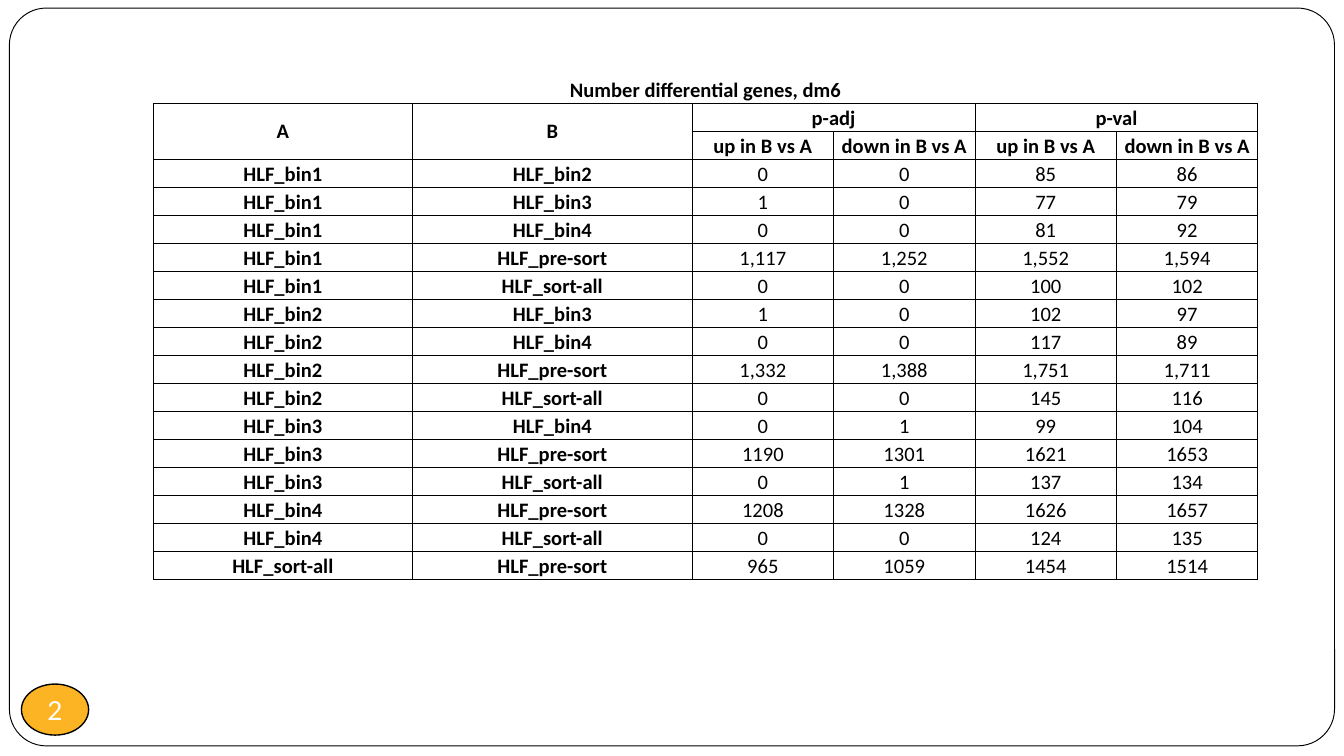
from dataclasses import dataclass

from lxml import etree
from pptx import Presentation
from pptx.dml.color import RGBColor
from pptx.enum.shapes import MSO_SHAPE
from pptx.enum.text import MSO_ANCHOR, PP_ALIGN
from pptx.oxml.ns import qn
from pptx.util import Inches, Pt

ROUND, OVAL = MSO_SHAPE.ROUNDED_RECTANGLE, MSO_SHAPE.OVAL
MIDDLE, BOTTOM = MSO_ANCHOR.MIDDLE, MSO_ANCHOR.BOTTOM
CENTER = PP_ALIGN.CENTER


@dataclass(frozen=True)
class Theme:
    ink: str = "000000"
    paper: str = "FFFFFF"
    accent: str = "FCB424"
    body: str = "Calibri"
    badge: str = "Lato"
    cell_size: float = 11
    badge_size: float = 14
    rule: float = 0.5
    badge_rule: float = 0.75


THEME = Theme()

TITLE = "Number differential genes, dm6"
GROUPS = ["A", "B", "p-adj", "", "p-val", ""]
HEADS = ["", ""] + ["up in B vs A", "down in B vs A"] * 2
DATA = [
    ("bin1", "bin2", "0", "0", "85", "86"),
    ("bin1", "bin3", "1", "0", "77", "79"),
    ("bin1", "bin4", "0", "0", "81", "92"),
    ("bin1", "pre-sort", "1,117", "1,252", "1,552", "1,594"),
    ("bin1", "sort-all", "0", "0", "100", "102"),
    ("bin2", "bin3", "1", "0", "102", "97"),
    ("bin2", "bin4", "0", "0", "117", "89"),
    ("bin2", "pre-sort", "1,332", "1,388", "1,751", "1,711"),
    ("bin2", "sort-all", "0", "0", "145", "116"),
    ("bin3", "bin4", "0", "1", "99", "104"),
    ("bin3", "pre-sort", "1190", "1301", "1621", "1653"),
    ("bin3", "sort-all", "0", "1", "137", "134"),
    ("bin4", "pre-sort", "1208", "1328", "1626", "1657"),
    ("bin4", "sort-all", "0", "0", "124", "135"),
    ("sort-all", "pre-sort", "965", "1059", "1454", "1514"),
]
NAME_WIDTHS = [1.93, 2.08]
# First row, first column, last row, last column of each merged block
SPANS = [(0, 0, 0, 5), (1, 0, 2, 0), (1, 1, 2, 1), (1, 2, 1, 3), (1, 4, 1, 5)]


def color(code):
    return RGBColor.from_string(code)


def style_text(frame, font, size, ink, bold=False):
    para = frame.paragraphs[0]
    para.alignment = CENTER
    for run in para.runs:
        run.font.name = font
        run.font.size = Pt(size)
        run.font.bold = bold
        run.font.color.rgb = color(ink)


def add_shape(slide, kind, box, fill, rule):
    shape = slide.shapes.add_shape(kind, *map(Inches, box))
    shape.shadow.inherit = False
    shape.fill.solid()
    shape.fill.fore_color.rgb = color(fill)
    shape.line.color.rgb = color(THEME.ink)
    shape.line.width = Pt(rule)
    return shape


def add_frame(slide, box):
    frame = add_shape(slide, ROUND, box, THEME.paper, THEME.rule)
    frame.adjustments[0] = 0.05


def add_badge(slide, box, label):
    badge = add_shape(slide, OVAL, box, THEME.accent, THEME.badge_rule)
    frame = badge.text_frame
    frame.margin_left = frame.margin_right = 0
    frame.margin_top = frame.margin_bottom = 0
    frame.word_wrap = False
    frame.vertical_anchor = MIDDLE
    frame.text = label
    style_text(frame, THEME.badge, THEME.badge_size, THEME.paper)


def set_borders(cell, shown):
    """Rule the sides in shown (letters of LRTB) and clear the others."""
    props = cell._tc.get_or_add_tcPr()
    for side in "LRTB":
        line = etree.SubElement(props, qn(f"a:ln{side}"), w=str(Pt(THEME.rule)))
        if side in shown:
            fill = etree.SubElement(line, qn("a:solidFill"))
            etree.SubElement(fill, qn("a:srgbClr"), val=THEME.ink)
        else:
            etree.SubElement(line, qn("a:noFill"))


def style_cell(cell, text, bold, anchor, sides):
    cell.margin_left = cell.margin_right = cell.margin_top = Inches(0.01)
    cell.margin_bottom = 0
    cell.vertical_anchor = anchor
    set_borders(cell, sides)
    cell.fill.background()
    if text:
        cell.text_frame.text = text
        style_text(cell.text_frame, THEME.body, THEME.cell_size, THEME.ink, bold)


def add_genes(slide, box):
    names = [[f"HLF_{a}", f"HLF_{b}", *counts] for a, b, *counts in DATA]
    rows = [[TITLE] + [""] * 5, GROUPS, HEADS] + names
    widths = NAME_WIDTHS + [(box[2] - sum(NAME_WIDTHS)) / 4] * 4
    table = slide.shapes.add_table(len(rows), len(widths), *map(Inches, box)).table
    table.first_row = table.horz_banding = False
    for col, width in zip(table.columns, widths):
        col.width = Inches(width)
    for row in table.rows:
        row.height = Inches(box[3] / len(rows))
    for r, row in enumerate(rows):
        for c, text in enumerate(row):
            bold = r < 3 or c < 2
            anchor = MIDDLE if r == 1 and c < 2 else BOTTOM
            style_cell(table.cell(r, c), text, bold, anchor, "LRTB" if r else "B")
    for top, left, bottom, right in SPANS:
        table.cell(top, left).merge(table.cell(bottom, right))


def main():
    deck = Presentation()
    deck.slide_width = Inches(10)
    deck.slide_height = deck.slide_width * 9 // 16
    slide = deck.slides.add_slide(deck.slide_layouts[6])
    add_frame(slide, (0.07, 0.06, 9.86, 5.49))
    add_badge(slide, (0.16, 5.09, 0.5, 0.38), "2")
    add_genes(slide, (1.14, 0.56, 8.22, 3.75))
    deck.save("out.pptx")


if __name__ == "__main__":
    main()
